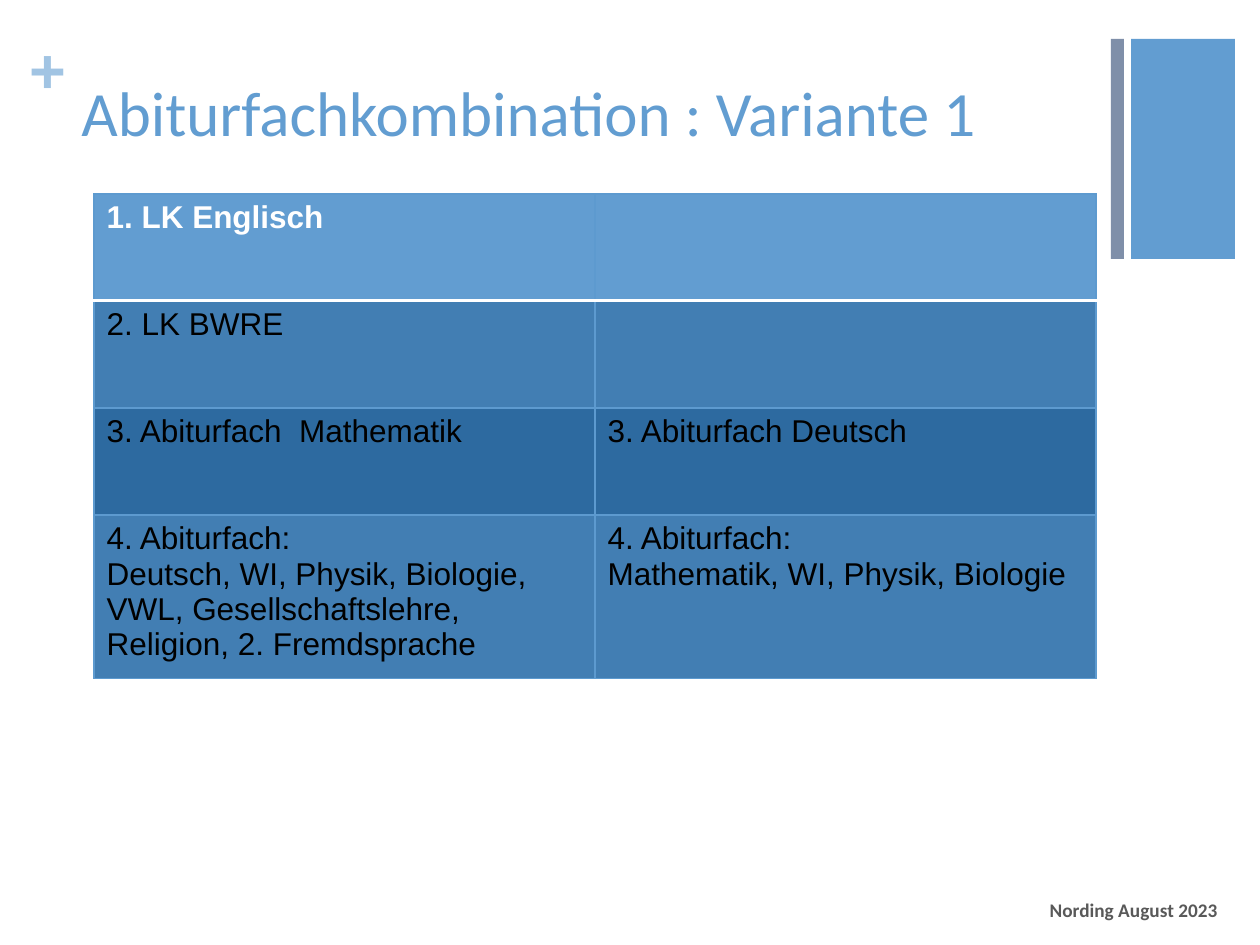
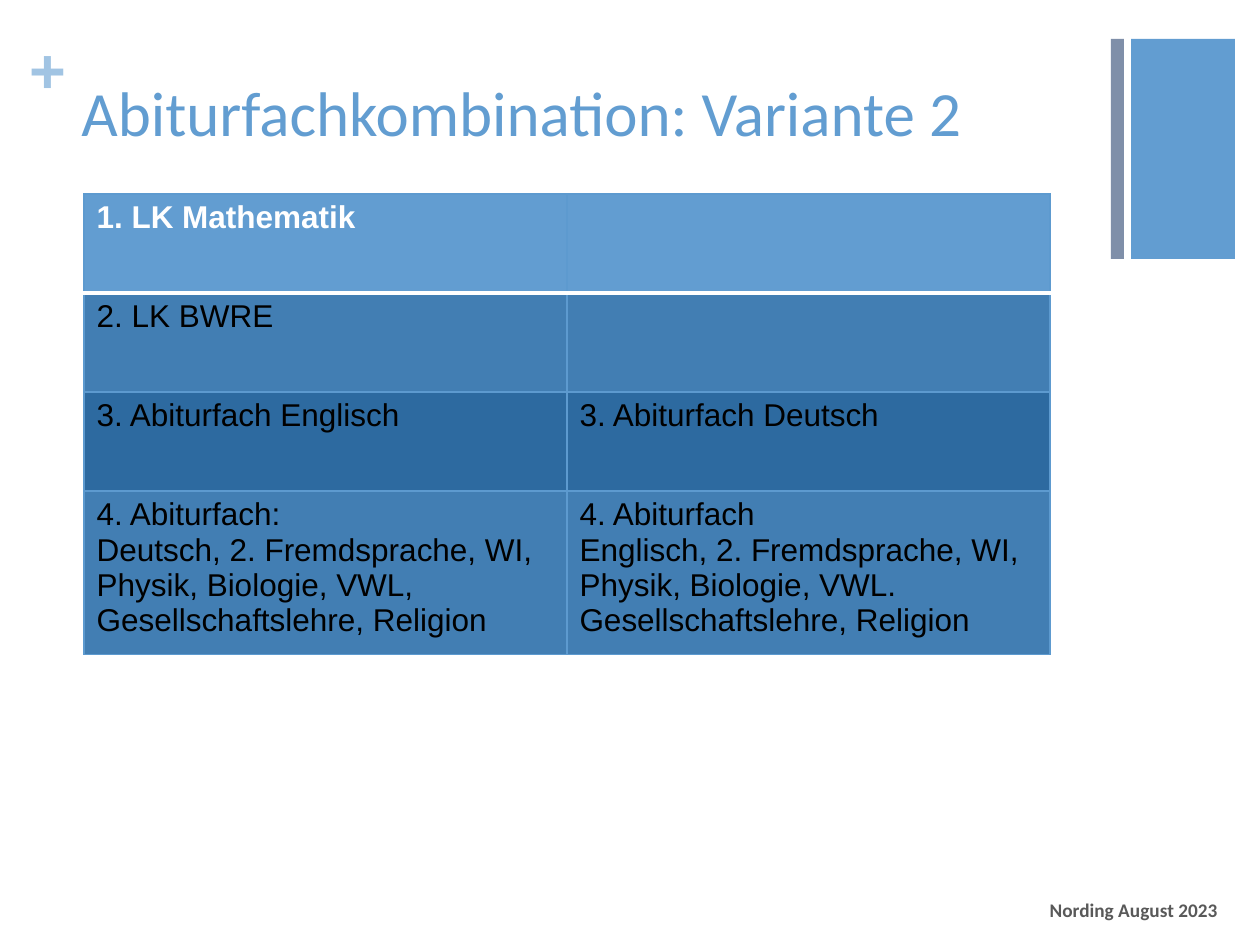
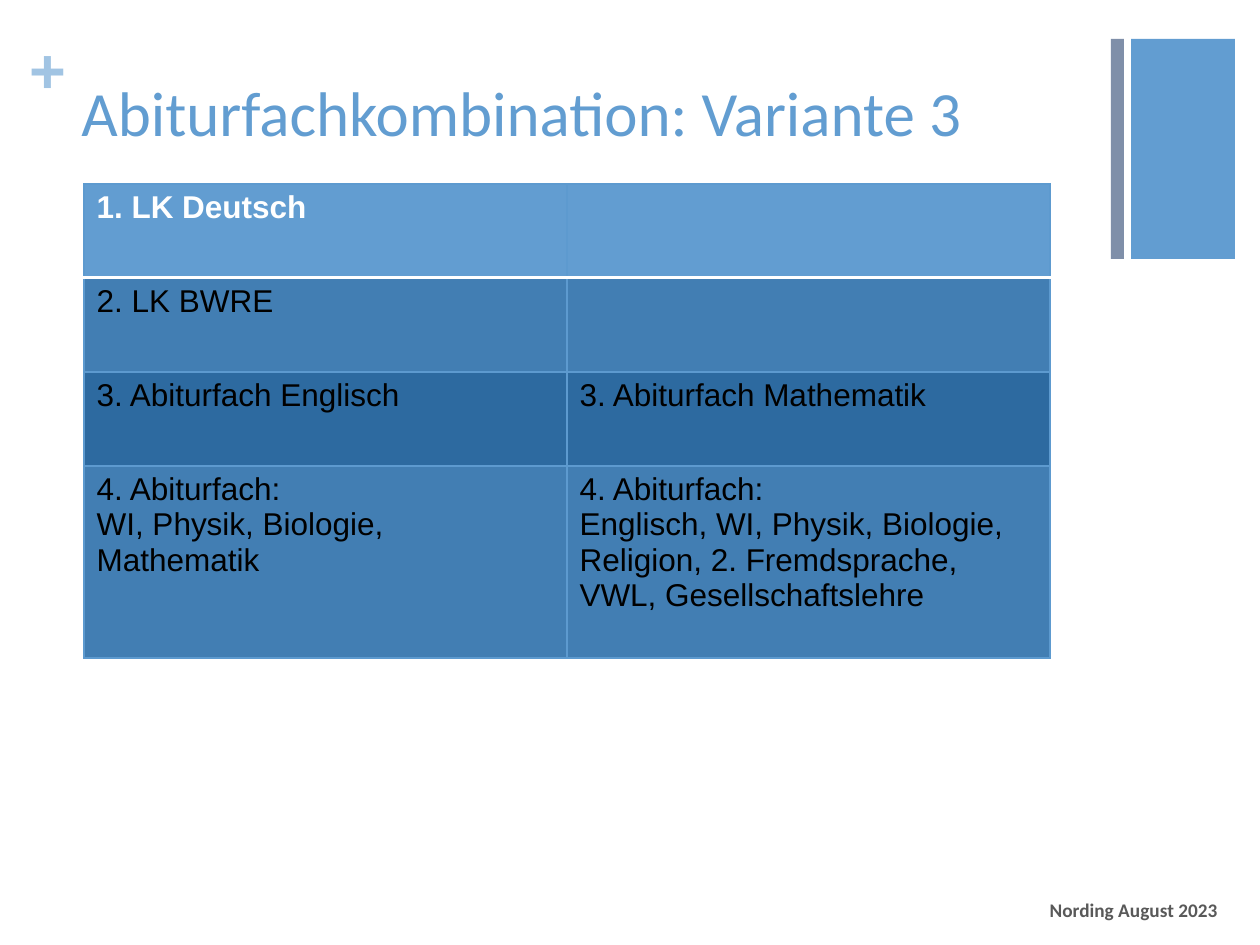
from dataclasses import dataclass

from lxml import etree
from pptx import Presentation, util as u
from pptx.dml.color import RGBColor
from pptx.enum import shapes, text
from pptx.oxml.ns import qn


@dataclass(frozen=True)
class Theme:
    blue: str = "629DD1"
    slate: str = "7F8FA9"
    pale: str = "A1C4E3"
    row_mid: str = "427EB3"
    row_dark: str = "2D6AA0"
    grid: str = "5D9ACF"
    white: str = "FFFFFF"
    black: str = "000000"
    grey: str = "595959"
    head_font: str = "Calibri"
    body_font: str = "Arial"
    title_size: int = 36
    body_size: int = 18
    footer_size: int = 11


def px(n):
    return u.Emu(round(n * 914400 / 126))


class Deck:
    def __init__(self, theme):
        self.t = theme
        self.prs = Presentation()
        self.prs.slide_width, self.prs.slide_height = px(1260), px(945)
        self.s = None

    def set_text(self, tf, lines, size, font, color, bold=False, align=text.PP_ALIGN.LEFT):
        for i, line in enumerate(lines):
            p = tf.add_paragraph() if i else tf.paragraphs[0]
            p.text = line
            p.alignment = align
            p.font.size = u.Pt(size)
            p.font.name = font
            p.font.bold = bold
            p.font.color.rgb = RGBColor.from_string(color)

    def label(self, box, line, size, font, color, inset=True, wrap=True,
              anchor=text.MSO_ANCHOR.TOP, **style):
        tf = self.s.shapes.add_textbox(*map(px, box)).text_frame
        tf.word_wrap = wrap
        tf.vertical_anchor = anchor
        if not inset:
            tf.margin_left = tf.margin_right = tf.margin_top = tf.margin_bottom = 0
        self.set_text(tf, [line], size, font, color, **style)

    def band(self, box, color):
        sp = self.s.shapes.add_shape(shapes.MSO_SHAPE.RECTANGLE, *map(px, box))
        sp.shadow.inherit = False
        sp.fill.solid()
        sp.fill.fore_color.rgb = RGBColor.from_string(color)
        sp.line.fill.background()

    def border(self, cell, side, color, width):
        tc_pr = cell._tc.get_or_add_tcPr()
        ln = etree.SubElement(tc_pr, qn(f"a:ln{side}"), w=str(u.Pt(width)))
        fill = etree.SubElement(ln, qn("a:solidFill"))
        etree.SubElement(fill, qn("a:srgbClr"), val=color)

    def table(self, left, top, col_width, row_heights, rows):
        t = self.t
        fills = [t.blue, t.row_mid, t.row_dark, t.row_mid]
        box = (left, top, col_width * len(rows[0]), sum(row_heights))
        tbl = self.s.shapes.add_table(len(rows), len(rows[0]), *map(px, box)).table
        for col in tbl.columns:
            col.width = px(col_width)
        for r, row in enumerate(rows):
            tbl.rows[r].height = px(row_heights[r])
            for c, lines in enumerate(row):
                cell = tbl.cell(r, c)
                for side in "LRTB":
                    under_head = (r, side) in ((0, "B"), (1, "T"))
                    self.border(cell, side, *((t.white, 2) if under_head else (t.grid, 1)))
                cell.fill.solid()
                cell.fill.fore_color.rgb = RGBColor.from_string(fills[r])
                self.set_text(cell.text_frame, lines, t.body_size, t.body_font,
                              t.black if r else t.white, bold=r == 0)

    def slide(self, title):
        t = self.t
        self.s = self.prs.slides.add_slide(self.prs.slide_layouts[6])
        self.label((30, 31, 35, 77), "+", t.title_size, t.body_font, t.pale,
                   inset=False, wrap=False, bold=True)
        self.band((1131, 39, 104, 220), t.blue)
        self.band((1111, 39, 13, 220), t.slate)
        self.label((69, 67, 1041, 154), title, t.title_size, t.head_font, t.blue)
        self.label((936, 885, 294, 50), "Nording August 2023", t.footer_size, t.head_font,
                   t.grey, anchor=text.MSO_ANCHOR.MIDDLE, bold=True,
                   align=text.PP_ALIGN.RIGHT)


VARIANTS = [
    ("Abiturfachkombination : Variante 1", (94, 194, 501), (107, 154), "1. LK Englisch",
     ("3. Abiturfach  Mathematik", "3. Abiturfach Deutsch"),
     (["4. Abiturfach:", "Deutsch, WI, Physik, Biologie, VWL, Gesellschaftslehre, "
       "Religion, 2. Fremdsprache"],
      ["4. Abiturfach:", "Mathematik, WI, Physik, Biologie"])),
    ("Abiturfachkombination: Variante 2", (84, 194, 483), (99, 154), "1. LK Mathematik",
     ("3. Abiturfach Englisch", "3. Abiturfach Deutsch"),
     (["4. Abiturfach:", "Deutsch, 2. Fremdsprache, WI, Physik, Biologie, VWL, "
       "Gesellschaftslehre, Religion"],
      ["4. Abiturfach", "Englisch, 2. Fremdsprache, WI, Physik, Biologie, VWL. "
       "Gesellschaftslehre, Religion"])),
    ("Abiturfachkombination: Variante 3", (84, 184, 483), (94, 192), "1. LK Deutsch",
     ("3. Abiturfach Englisch", "3. Abiturfach Mathematik"),
     (["4. Abiturfach:", "WI, Physik, Biologie, Mathematik"],
      ["4. Abiturfach:", "Englisch, WI, Physik, Biologie, Religion, 2. Fremdsprache, "
       "VWL, Gesellschaftslehre"])),
]


def main():
    deck = Deck(Theme())
    for title, place, (row, last_row), first, third, fourth in VARIANTS:
        deck.slide(title)
        deck.table(*place, [row] * 3 + [last_row], [
            ([first], [""]),
            (["2. LK BWRE"], [""]),
            [[subject] for subject in third],
            fourth,
        ])
    deck.prs.save("out.pptx")


if __name__ == "__main__":
    main()
